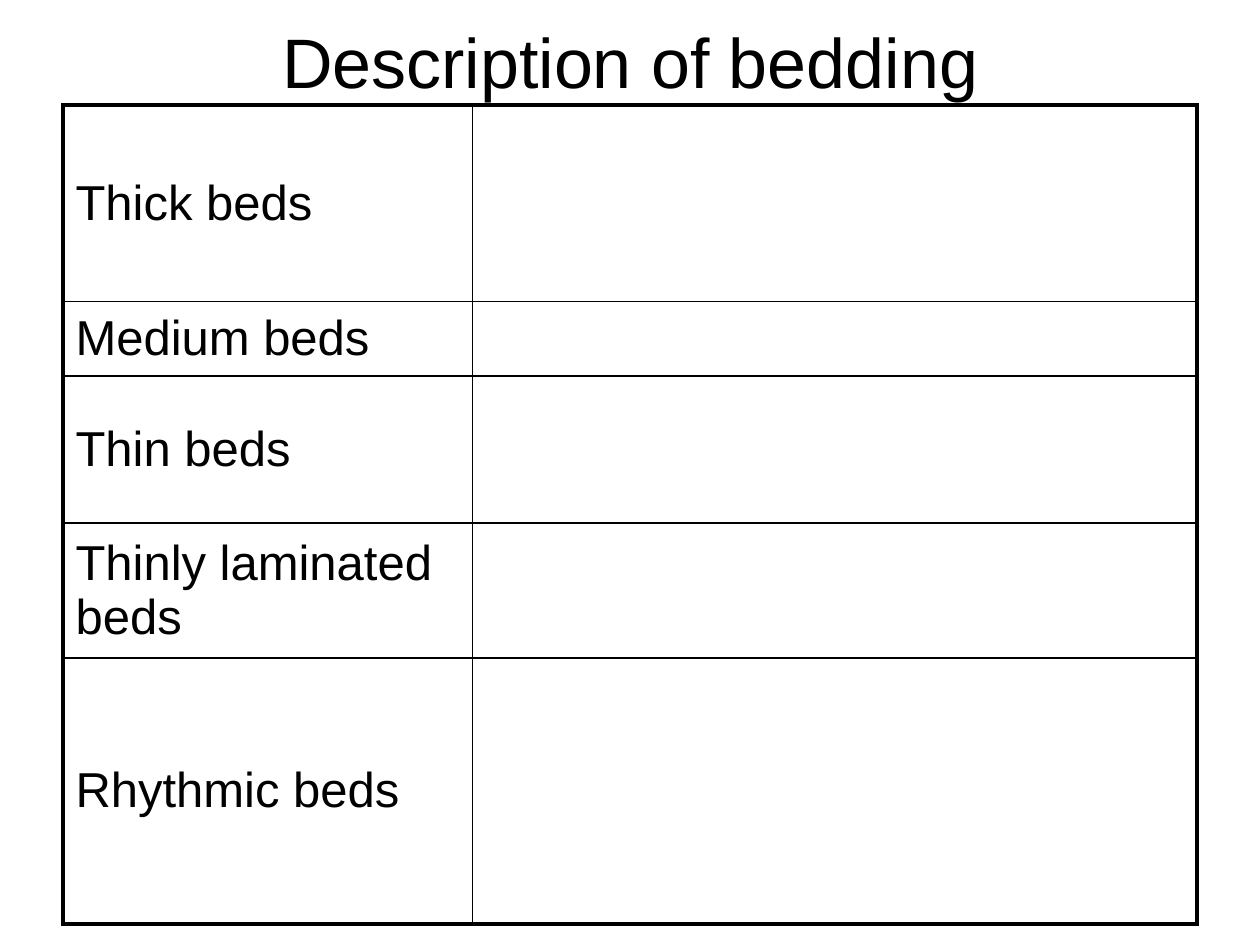
from lxml import etree
from pptx import Presentation
from pptx.dml.color import RGBColor
from pptx.enum.text import MSO_ANCHOR, PP_ALIGN
from pptx.oxml.ns import qn
from pptx.util import Pt

FONT = "Arial"
BLACK = "000000"
THICK, THIN = 2.25, 1
COLUMN_WIDTHS = [234, 414]
BED_ROWS = [
    ("Thick beds", 112.3),
    ("Medium beds", 42.5),
    ("Thin beds", 84.2),
    ("Thinly laminated beds", 77),
    ("Rhythmic beds", 152),
]


def color(value):
    return RGBColor.from_string(value)


def format_paragraph(paragraph, size, alignment):
    paragraph.alignment = alignment
    for run in paragraph.runs:
        run.font.name = FONT
        run.font.size = Pt(size)
        run.font.color.rgb = color(BLACK)


def set_borders(cell, widths):
    """Draw the left, right, top and bottom borders, in that order."""
    properties = cell._tc.get_or_add_tcPr()
    for index, (tag, width) in enumerate(zip(("a:lnL", "a:lnR", "a:lnT", "a:lnB"), widths)):
        line = etree.Element(qn(tag), w=str(Pt(width)))
        fill = etree.SubElement(line, qn("a:solidFill"))
        etree.SubElement(fill, qn("a:srgbClr"), val=BLACK)
        properties.insert(index, line)


def add_title(slide, left, top, width, height):
    box = slide.shapes.add_textbox(Pt(left), Pt(top), Pt(width), Pt(height))
    text_frame = box.text_frame
    text_frame.word_wrap = True
    text_frame.vertical_anchor = MSO_ANCHOR.MIDDLE
    text_frame.text = "Description of bedding"
    format_paragraph(text_frame.paragraphs[0], 40, PP_ALIGN.CENTER)


def add_bedding_table(slide, left, top, width, height):
    row_count, column_count = len(BED_ROWS), len(COLUMN_WIDTHS)
    table = slide.shapes.add_table(
        row_count, column_count, Pt(left), Pt(top), Pt(width), Pt(height)
    ).table
    table.first_row = False
    table.horz_banding = False

    for column, column_width in zip(table.columns, COLUMN_WIDTHS):
        column.width = Pt(column_width)

    for row_index, (label, row_height) in enumerate(BED_ROWS):
        table.rows[row_index].height = Pt(row_height)

        # Bed name in the first column; the second stays empty
        name_cell = table.cell(row_index, 0)
        name_cell.text_frame.text = label
        name_cell.vertical_anchor = MSO_ANCHOR.MIDDLE
        format_paragraph(name_cell.text_frame.paragraphs[0], 28, PP_ALIGN.LEFT)

        # Thick outer frame, thin inner lines
        for column_index in range(column_count):
            cell = table.cell(row_index, column_index)
            cell.fill.background()
            on_frame = (
                column_index == 0,
                column_index == column_count - 1,
                row_index == 0,
                row_index == row_count - 1,
            )
            set_borders(cell, [THICK if outer else THIN for outer in on_frame])


def main():
    presentation = Presentation()
    presentation.slide_width = Pt(720)
    presentation.slide_height = Pt(540)
    slide = presentation.slides.add_slide(presentation.slide_layouts[6])
    add_title(slide, 36, 12.2, 648, 44.6)
    add_bedding_table(slide, 36, 60, 648, 468)
    presentation.save("out.pptx")


if __name__ == "__main__":
    main()
